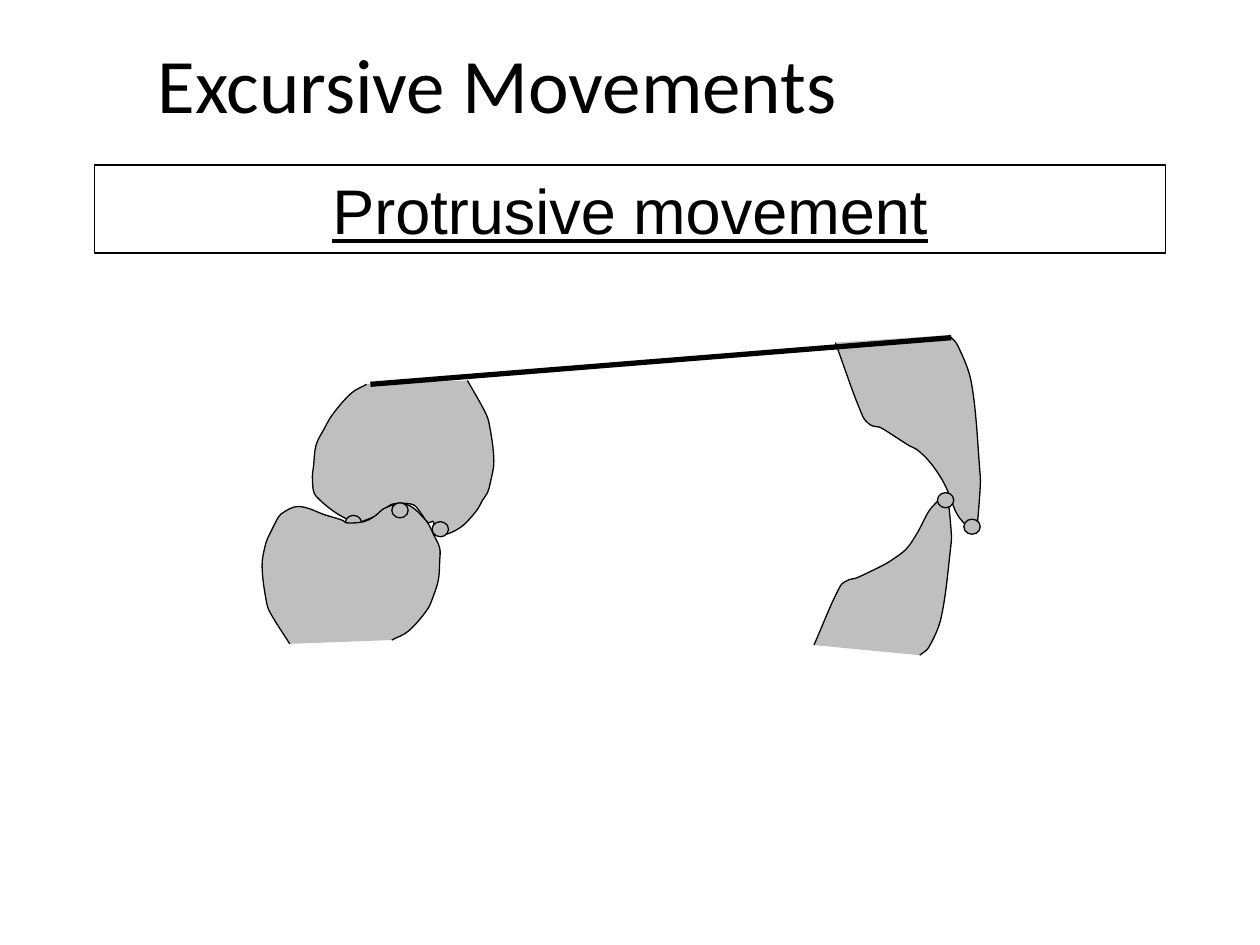
from math import dist
from lxml import etree
from pptx import Presentation
from pptx import util as u
from pptx.dml.color import RGBColor
from pptx.enum import shapes, text
from pptx.oxml.ns import qn

BLACK = RGBColor(0x00, 0x00, 0x00)
WHITE = RGBColor(0xFF, 0xFF, 0xFF)
TOOTH_GRAY = RGBColor(0xBF, 0xBF, 0xBF)

TITLE = "Excursive Movements"
HEADING = "Protrusive movement"
CUSP_SIZE = (0.13, 0.12)
UPPER_CUSPS = [(7.65, 4.12), (3.43, 4.14), (2.74, 4.09)]
LOWER_CUSPS = [(3.11, 3.99), (7.44, 3.91)]
OCCLUSAL_LINE = [(2.94, 3.05), (7.55, 2.68)]

UPPER_MOLAR = [
    (2.91, 3.05), (2.79, 3.12), (2.64, 3.29), (2.57, 3.41), (2.51, 3.53),
    (2.49, 3.69), (2.48, 3.81), (2.51, 3.94), (2.8, 4.14), (2.95, 4.11),
    (3.04, 4.05), (3.12, 4), (3.26, 4), (3.3, 4.02), (3.36, 4.1),
    (3.4, 4.15), (3.44, 4.14), (3.44, 4.2), (3.49, 4.25), (3.65, 4.19),
    (3.77, 4.07), (3.81, 4.01), (3.83, 3.97), (3.87, 3.91), (3.89, 3.84),
    (3.92, 3.66), (3.88, 3.35), (3.84, 3.25), (3.71, 3.02),
]
UPPER_INCISOR = [
    (6.63, 2.72), (6.85, 3.31), (6.92, 3.38), (6.98, 3.39), (7.11, 3.47),
    (7.22, 3.54), (7.28, 3.57), (7.39, 3.68), (7.5, 3.85), (7.59, 4.07),
    (7.64, 4.14), (7.71, 4.2), (7.75, 4.19), (7.76, 4.13), (7.78, 3.86),
    (7.78, 3.78), (7.71, 3.04), (7.6, 2.74), (7.53, 2.66),
]
LOWER_INCISOR = [
    (6.46, 5.12), (6.67, 4.65), (6.74, 4.6), (6.79, 4.59), (6.92, 4.53),
    (7.02, 4.48), (7.07, 4.45), (7.19, 4.36), (7.28, 4.23), (7.37, 4.06),
    (7.42, 4), (7.48, 3.95), (7.52, 3.96), (7.53, 4.01), (7.55, 4.23),
    (7.55, 4.3), (7.47, 4.9), (7.37, 5.14), (7.3, 5.2),
]
LOWER_MOLAR = [
    (3.11, 5.08), (3.24, 5.01), (3.39, 4.84), (3.44, 4.73), (3.48, 4.6),
    (3.49, 4.45), (3.49, 4.35), (3.44, 4.24), (3.38, 4.13), (3.22, 4),
    (3.06, 4.03), (2.97, 4.1), (2.89, 4.14), (2.75, 4.15), (2.72, 4.13),
    (2.59, 4.09), (2.37, 4.02), (2.23, 4.08), (2.19, 4.14), (2.17, 4.18),
    (2.14, 4.24), (2.11, 4.31), (2.08, 4.49), (2.12, 4.8), (2.16, 4.89),
    (2.3, 5.11),
]


def paint(shape, fill, line):
    shape.fill.solid()
    shape.fill.fore_color.rgb = fill
    shape.line.color.rgb = line
    shape.line.width = u.Pt(0.75)


def place(shape, left, top, width, height):
    shape.left, shape.top = u.Inches(left), u.Inches(top)
    shape.width, shape.height = u.Inches(width), u.Inches(height)


def write(shape, words, font, size, align):
    para = shape.text_frame.paragraphs[0]
    para.text = words
    para.alignment = align
    para.font.name, para.font.size = font, u.Pt(size)
    para.font.color.rgb = BLACK
    return para


def directions(points):
    ends = zip(points[:1] + points[:-1], points[1:] + points[-1:])
    return [((b[0] - a[0]) / dist(a, b), (b[1] - a[1]) / dist(a, b)) for a, b in ends]


def curve_segments(shape):
    outline = next(shape._element.iter(qn("a:path")))
    points = [(int(pt.get("x")), int(pt.get("y"))) for pt in outline.iter(qn("a:pt"))]
    headings = directions(points)
    for i, segment in enumerate(outline.findall(qn("a:lnTo"))):
        start, end = points[i], points[i + 1]
        reach = dist(start, end) / 3
        leave = [p + reach * d for p, d in zip(start, headings[i])]
        arrive = [p - reach * d for p, d in zip(end, headings[i + 1])]
        curve = etree.Element(qn("a:cubicBezTo"))
        for x, y in (leave, arrive, end):
            etree.SubElement(curve, qn("a:pt"), x=str(round(x)), y=str(round(y)))
        outline.replace(segment, curve)


def add_tooth(page, outline):
    points = [(u.Inches(x), u.Inches(y)) for x, y in outline]
    builder = page.shapes.build_freeform(*points[0])
    builder.add_line_segments(points[1:], close=False)
    tooth = builder.convert_to_shape()
    curve_segments(tooth)
    tooth.shadow.inherit = False
    paint(tooth, TOOTH_GRAY, BLACK)


def add_cusp(page, left, top):
    cusp = page.shapes.add_shape(
        shapes.MSO_SHAPE.OVAL, *map(u.Inches, (left, top, *CUSP_SIZE)))
    cusp.shadow.inherit = False
    paint(cusp, TOOTH_GRAY, BLACK)


def add_occlusal_line(page):
    ends = [u.Inches(v) for point in OCCLUSAL_LINE for v in point]
    line = page.shapes.add_connector(shapes.MSO_CONNECTOR.STRAIGHT, *ends)
    line.line.color.rgb = BLACK
    line.line.width = u.Pt(3)
    etree.SubElement(line._element.spPr, qn("a:effectLst"))


def main():
    deck = Presentation()
    deck.slide_width, deck.slide_height = u.Inches(10), u.Inches(7.5)
    page = deck.slides.add_slide(deck.slide_layouts[5])

    title = page.shapes.title
    place(title, 1.15, 0.08, 7.83, 1.25)
    paint(title, WHITE, WHITE)
    title.text_frame.vertical_anchor = text.MSO_ANCHOR.MIDDLE
    write(title, TITLE, "Calibri", 44, text.PP_ALIGN.LEFT).line_spacing = 0.9

    for outline in (UPPER_MOLAR, UPPER_INCISOR):
        add_tooth(page, outline)
    add_occlusal_line(page)
    for cusp in UPPER_CUSPS:
        add_cusp(page, *cusp)

    box = page.shapes.add_textbox(*map(u.Inches, (0.75, 1.31, 8.5, 0.7)))
    paint(box, WHITE, BLACK)
    box.text_frame.word_wrap = True
    box.text_frame.auto_size = text.MSO_AUTO_SIZE.SHAPE_TO_FIT_TEXT
    write(box, HEADING, "Arial", 36, text.PP_ALIGN.CENTER).font.underline = True

    for outline in (LOWER_INCISOR, LOWER_MOLAR):
        add_tooth(page, outline)
    for cusp in LOWER_CUSPS:
        add_cusp(page, *cusp)

    deck.save("out.pptx")


if __name__ == "__main__":
    main()
